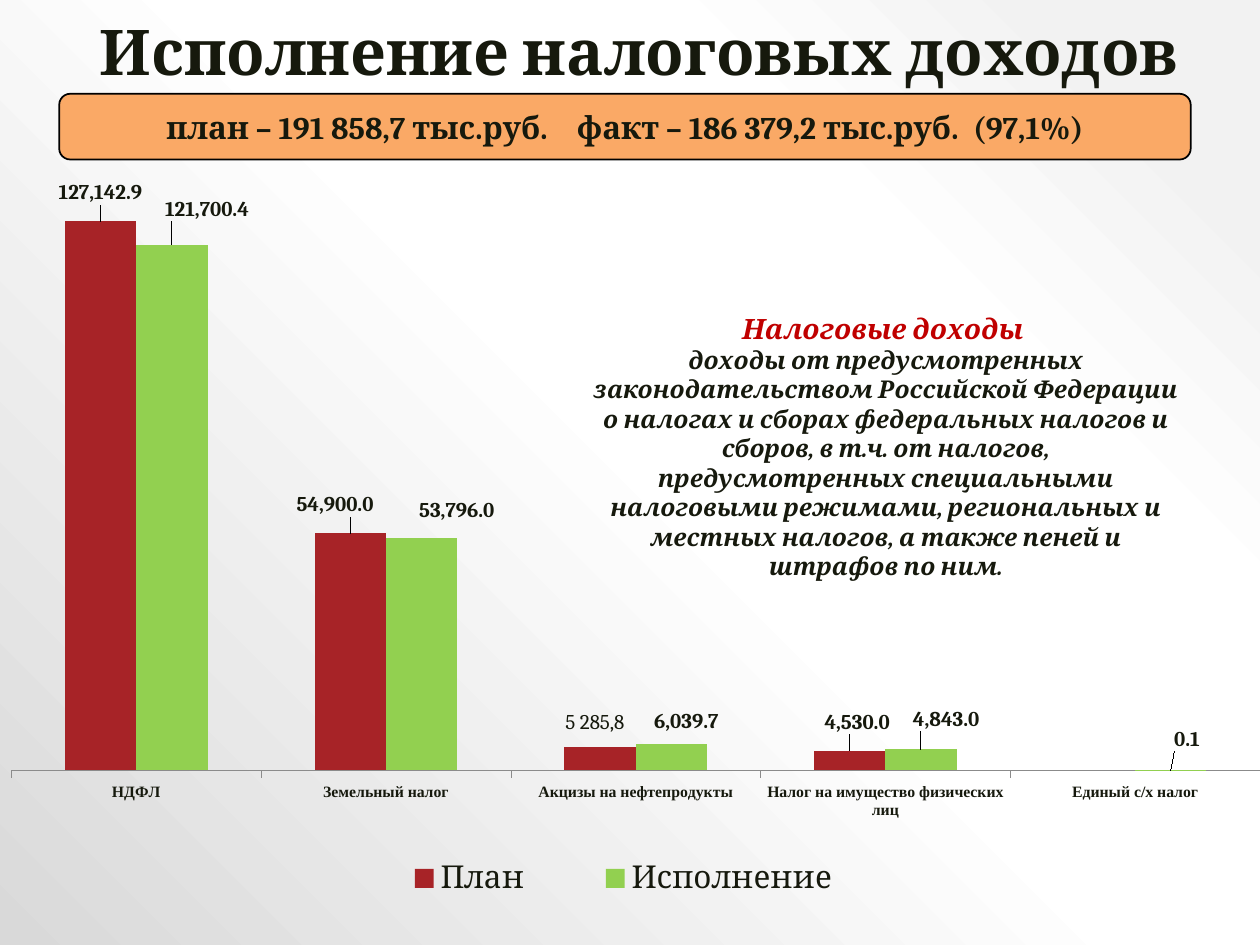
from lxml import etree
from pptx import Presentation
from pptx.chart.data import CategoryChartData
from pptx.dml.color import RGBColor
from pptx.enum.chart import XL_CHART_TYPE, XL_LABEL_POSITION, XL_LEGEND_POSITION, XL_TICK_MARK
from pptx.enum.shapes import MSO_SHAPE
from pptx.enum.text import MSO_ANCHOR, PP_ALIGN
from pptx.oxml import parse_xml
from pptx.oxml.ns import qn
from pptx.util import Inches, Pt

BARS = XL_CHART_TYPE.COLUMN_CLUSTERED
ABOVE = XL_LABEL_POSITION.OUTSIDE_END
BOTTOM = XL_LEGEND_POSITION.BOTTOM
OUT, NONE = XL_TICK_MARK.OUTSIDE, XL_TICK_MARK.NONE
ROUND = MSO_SHAPE.ROUNDED_RECTANGLE
MIDDLE, LOW, TOP = MSO_ANCHOR.MIDDLE, MSO_ANCHOR.BOTTOM, MSO_ANCHOR.TOP
CENTER = PP_ALIGN.CENTER

INK = RGBColor.from_string("16190D")
THEME = {
    "plan": RGBColor.from_string("A72327"),
    "fact": RGBColor.from_string("92D050"),
    "banner": RGBColor.from_string("FAA966"),
    "edge": RGBColor.from_string("000000"),
    "axis": RGBColor.from_string("8B8B8B"),
    "back": [(10, "F2F2F2"), (28, "FFFFFF"), (48, "FFFFFF"), (100, "D9D9D9")],
    "title": {"size": Pt(36), "bold": True},
    "total": {"size": Pt(18), "bold": True},
    "term": {"size": Pt(16), "bold": True, "italic": True, "color": RGBColor.from_string("C00000")},
    "note": {"size": Pt(14), "bold": True, "italic": True},
    "label": {"size": Pt(12), "bold": True},
    "plain": {"size": Pt(12), "bold": False},
    "legend": {"size": Pt(18), "bold": False},
    "ticks": {"size": Pt(9), "bold": True, "name": "Times New Roman"},
    "chart": {"size": Pt(16.8), "name": "Quicksand", "color": RGBColor.from_string("545454")},
}
NUMBER = "#,##0.0"
NO_LEADER = (
    '<c:extLst xmlns:c="http://schemas.openxmlformats.org/drawingml/2006/chart">'
    '<c:ext uri="{CE6537A1-D6FC-4f65-9D91-7224C49458BB}" '
    'xmlns:c15="http://schemas.microsoft.com/office/drawing/2012/chart">'
    '<c15:showLeaderLines val="0"/></c:ext></c:extLst>'
)


def style(font, look):
    for key, value in {"name": "Cambria", "color": INK, **THEME[look]}.items():
        if key == "color":
            font.color.rgb = value
        else:
            setattr(font, key, value)


def place(parent, spot, modes, **parts):
    """Insert a manual layout, in percent of the chart, as child number spot."""
    layout = etree.Element(qn("c:layout"))
    manual = etree.SubElement(layout, qn("c:manualLayout"))
    shares = {key: round(value / 100, 4) for key, value in parts.items()}
    for key, value in {**modes, **shares}.items():
        etree.SubElement(manual, qn("c:" + key)).set("val", str(value))
    for old in parent.findall(qn("c:layout")):
        parent.remove(old)
    parent.insert(spot, layout)


deck = Presentation()
deck.slide_width, deck.slide_height = Inches(10), Inches(7.5)
wide, high = deck.slide_width / 100, deck.slide_height / 100
slide = deck.slides.add_slide(deck.slide_layouts[6])

# Background: a radial fade from the top right corner
slide.background.fill.solid()
stops = "".join(
    f'<a:gs pos="{at * 1000}"><a:srgbClr val="{tint}"/></a:gs>' for at, tint in THEME["back"]
)
fade = parse_xml(
    '<a:gradFill xmlns:a="http://schemas.openxmlformats.org/drawingml/2006/main" rotWithShape="1">'
    f'<a:gsLst>{stops}</a:gsLst><a:path path="circle">'
    '<a:fillToRect l="100000" b="100000"/></a:path></a:gradFill>'
)
back = slide.background.fill._xPr
back.replace(back[0], fade)

# Chart: label shifts are in percent of the chart's size
cats = ["НДФЛ", "Земельный налог", "Акцизы на нефтепродукты",
        "Налог на имущество физических лиц", "Единый с/х налог"]
rows = [
    ("План", "plan", [127142.9, 54900, 5285.8, 4530, None],
     [(0, -1.25), (-1.2, -1.25), (-0.4, -0.85), (0.6, -1.25), None]),
    ("Исполнение", "fact", [121700.4, 53796, 6039.7, 4843, 0.1],
     [(2.8, -2.05), (2.8, -1.15), (1.2, -0.6), (2, -1.4), (1.3, -1.5)]),
]
data = CategoryChartData(number_format=NUMBER)
data.categories = cats
for name, _, values, _ in rows:
    data.add_series(name, values)
chart = slide.shapes.add_chart(
    BARS, int(0.8 * wide), int(4.8 * high), int(100 * wide), int(95.2 * high), data
).chart
chart.has_title = False
style(chart.font, "chart")
edges = {"xMode": "edge", "yMode": "edge"}
place(chart._chartSpace.chart.plotArea, 0, {"layoutTarget": "inner", **edges},
      x=0.1, y=3.8, w=99.1, h=76.8)

axis = chart.category_axis
axis.major_tick_mark, axis.minor_tick_mark = OUT, NONE
axis.format.line.color.rgb = THEME["axis"]
axis.format.line.width = Pt(0.25)
style(axis.tick_labels.font, "ticks")
scale = chart.value_axis
limits = {"minimum_scale": 0, "maximum_scale": 160000, "major_unit": 100000,
          "has_major_gridlines": False, "visible": False}
for key, value in limits.items():
    setattr(scale, key, value)

plot = chart.plots[0]
plot.gap_width, plot.overlap, plot.vary_by_categories = 150, 0, False
for series, (_, tint, _, shifts) in zip(plot.series, rows):
    series.format.fill.solid()
    series.format.fill.fore_color.rgb = THEME[tint]
    labels = series.data_labels
    labels.show_value, labels.position = True, ABOVE
    labels.number_format, labels.number_format_is_linked = NUMBER, False
    style(labels.font, "label")
    for spot, shift in enumerate(shifts):
        if shift is None:
            continue
        label = series.points[spot].data_label
        if (tint, spot) == ("plan", 2):
            run = label.text_frame.paragraphs[0].add_run()
            run.text = "5 285,8"
            style(run.font, "plain")
        else:
            style(label.font, "label")
        label.position = ABOVE
        node = series._element.xpath(f"c:dLbls/c:dLbl[c:idx/@val={spot}]")[0]
        place(node, 1, {}, x=shift[0], y=shift[1])
    series._element.xpath("c:dLbls")[0].append(parse_xml(NO_LEADER))

chart.has_legend = True
legend = chart.legend
legend.position, legend.include_in_layout = BOTTOM, False
style(legend.font, "legend")
place(legend._element, 1, edges, x=26.5, y=89.1, w=44.4, h=7)

# Texts: boxes in percent of the slide
banner = slide.shapes.add_shape(
    ROUND, int(4.7 * wide), int(9.93 * high), int(89.8 * wide), int(6.95 * high)
)
banner.shadow.inherit = False
banner.fill.solid()
banner.fill.fore_color.rgb = THEME["banner"]
banner.line.color.rgb, banner.line.width = THEME["edge"], Pt(1)
title = slide.shapes.add_textbox(int(3.9 * wide), 0, int(93.7 * wide), int(10.1 * high))
note = slide.shapes.add_textbox(
    int(46.1 * wide), int(32.3 * high), int(48.4 * wide), int(23.7 * high)
)
# Each piece of a line: words, then the extra points that widen the space after them
texts = [
    (title, LOW, 0.9, [("title", [("Исполнение налоговых доходов", 0)])]),
    (banner, MIDDLE, 1, [
        ("total", [("план – 191 858,7 тыс.руб.", 12.4), ("факт – 186 379,2 тыс.руб.", 4.2),
                   ("(97,1%)", 0)])]),
    (note, TOP, 1, [
        ("term", [("Налоговые доходы ", 0)]),
        ("note", [("доходы от предусмотренных законодательством Российской Федерации "
                   "о налогах и сборах федеральных налогов и сборов, в т.ч. от налогов,", 3.2),
                  ("предусмотренных специальными налоговыми режимами, региональных и "
                   "местных налогов, а также пеней и штрафов по ним.", 0)])]),
]
for shape, anchor, space, lines in texts:
    frame = shape.text_frame
    frame.word_wrap, frame.vertical_anchor = True, anchor
    for count, (look, pieces) in enumerate(lines):
        para = frame.add_paragraph() if count else frame.paragraphs[0]
        para.alignment, para.line_spacing = CENTER, space
        for words, extra in pieces:
            for part, gap in [(words, 0), (" ", extra)][:2 if extra else 1]:
                run = para.add_run()
                run.text = part
                style(run.font, look)
                if gap:
                    run._r.get_or_add_rPr().set("spc", str(int(gap * 100)))

deck.save("out.pptx")
